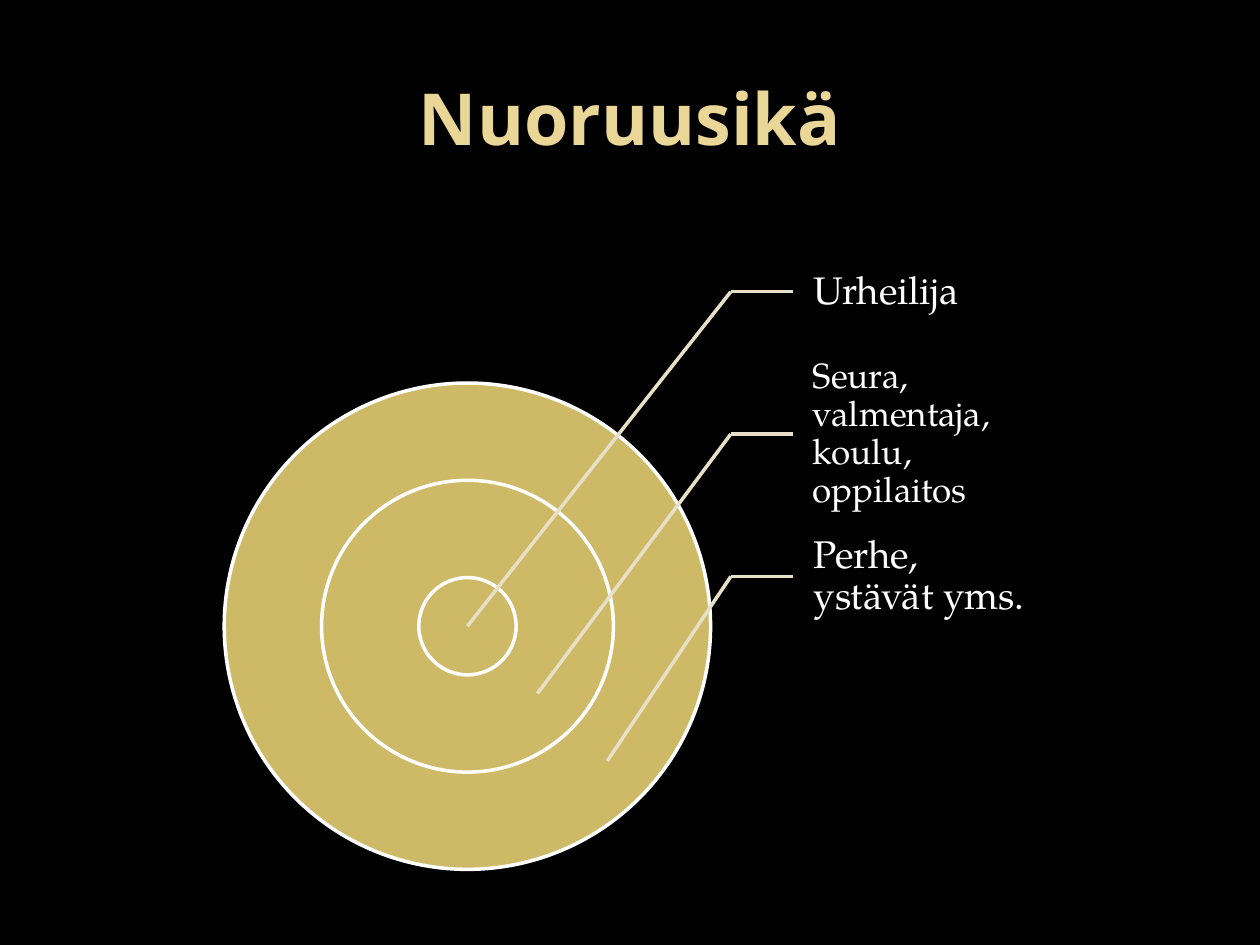
from lxml.etree import SubElement
from pptx import Presentation
from pptx.dml.color import RGBColor
from pptx.enum.shapes import MSO_CONNECTOR, MSO_SHAPE
from pptx.enum.text import MSO_ANCHOR, PP_ALIGN
from pptx.oxml.ns import qn
from pptx.util import Inches, Pt

BACKGROUND, GOLD, TITLE_GOLD = "000000", "CEB966", "EAD696"
WHITE, LEADER = "FFFFFF", "E8E0C6"
CENTER_X, CENTER_Y = 3.71, 4.97
RING_UNIT = 0.386  # radius of the innermost circle
RING_RADII = (5, 3, 1)
LABEL_LEFT, LABEL_TOP, LABEL_WIDTH, LABEL_HEIGHT = 6.29, 1.75, 1.93, 1.13
BEND_X = 5.8
TARGET_STEP_X, TARGET_STEP_Y = 0.555, 0.535
# Label text, font size, left inset; from the innermost ring outwards
LABELS = [
    ("Urheilija", 22, 0.17),
    ("Seura, valmentaja, koulu, oppilaitos", 20, 0.16),
    ("Perhe, ystävät yms.", 22, 0.17),
]


def color(hex_value):
    return RGBColor.from_string(hex_value)


def write(frame, text, *, size, font, fill, bold=False,
          align=PP_ALIGN.LEFT, spacing=1.0, insets=(0.1, 0.05, 0.1, 0.05)):
    frame.word_wrap = True
    frame.vertical_anchor = MSO_ANCHOR.MIDDLE
    (frame.margin_left, frame.margin_top,
     frame.margin_right, frame.margin_bottom) = map(Inches, insets)
    paragraph = frame.paragraphs[0]
    paragraph.alignment = align
    paragraph.line_spacing = spacing
    run = paragraph.add_run()
    run.text = text
    run.font.size = Pt(size)
    run.font.name = font
    run.font.bold = bold
    run.font.color.rgb = color(fill)


def add_title(slide, text):
    title = slide.shapes.title
    title.left, title.top, title.width, title.height = map(
        Inches, (0.5, 0.3, 9, 1.25))
    write(title.text_frame, text, size=41, font="Noto Sans",
          fill=TITLE_GOLD, bold=True, align=PP_ALIGN.CENTER)


def add_ring(slide, radius):
    ring = slide.shapes.add_shape(
        MSO_SHAPE.OVAL, Inches(CENTER_X - radius), Inches(CENTER_Y - radius),
        Inches(2 * radius), Inches(2 * radius))
    ring.shadow.inherit = False
    ring.fill.solid()
    ring.fill.fore_color.rgb = color(GOLD)
    ring.line.color.rgb = color(WHITE)
    ring.line.width = Pt(2)


def add_line(slide, start, end):
    line = slide.shapes.add_connector(
        MSO_CONNECTOR.STRAIGHT, *map(Inches, (*start, *end)))
    line.line.color.rgb = color(LEADER)
    line.line.width = Pt(2)
    SubElement(line._element.spPr, qn("a:effectLst"))


def add_callout(slide, row, text, size, inset):
    """Label one ring and lead a bent line from the label into it."""
    top = LABEL_TOP + row * LABEL_HEIGHT
    middle = top + LABEL_HEIGHT / 2
    label = slide.shapes.add_textbox(
        *map(Inches, (LABEL_LEFT, top, LABEL_WIDTH, LABEL_HEIGHT)))
    write(label.text_frame, text, size=size, font="TeX Gyre Pagella",
          fill=WHITE, spacing=0.9, insets=(inset, 0.03, 0.03, 0.03))
    bend = (BEND_X, middle)
    target = (CENTER_X + row * TARGET_STEP_X, CENTER_Y + row * TARGET_STEP_Y)
    add_line(slide, bend, (LABEL_LEFT, middle))
    add_line(slide, bend, target)


def main():
    deck = Presentation()
    deck.slide_width, deck.slide_height = Inches(10), Inches(7.5)
    slide = deck.slides.add_slide(deck.slide_layouts.get_by_name("Title Only"))
    slide.background.fill.solid()
    slide.background.fill.fore_color.rgb = color(BACKGROUND)

    add_title(slide, "Nuoruusikä")
    for units in RING_RADII:
        add_ring(slide, units * RING_UNIT)
    for row, (text, size, inset) in enumerate(LABELS):
        add_callout(slide, row, text, size, inset)
    deck.save("out.pptx")


if __name__ == "__main__":
    main()
